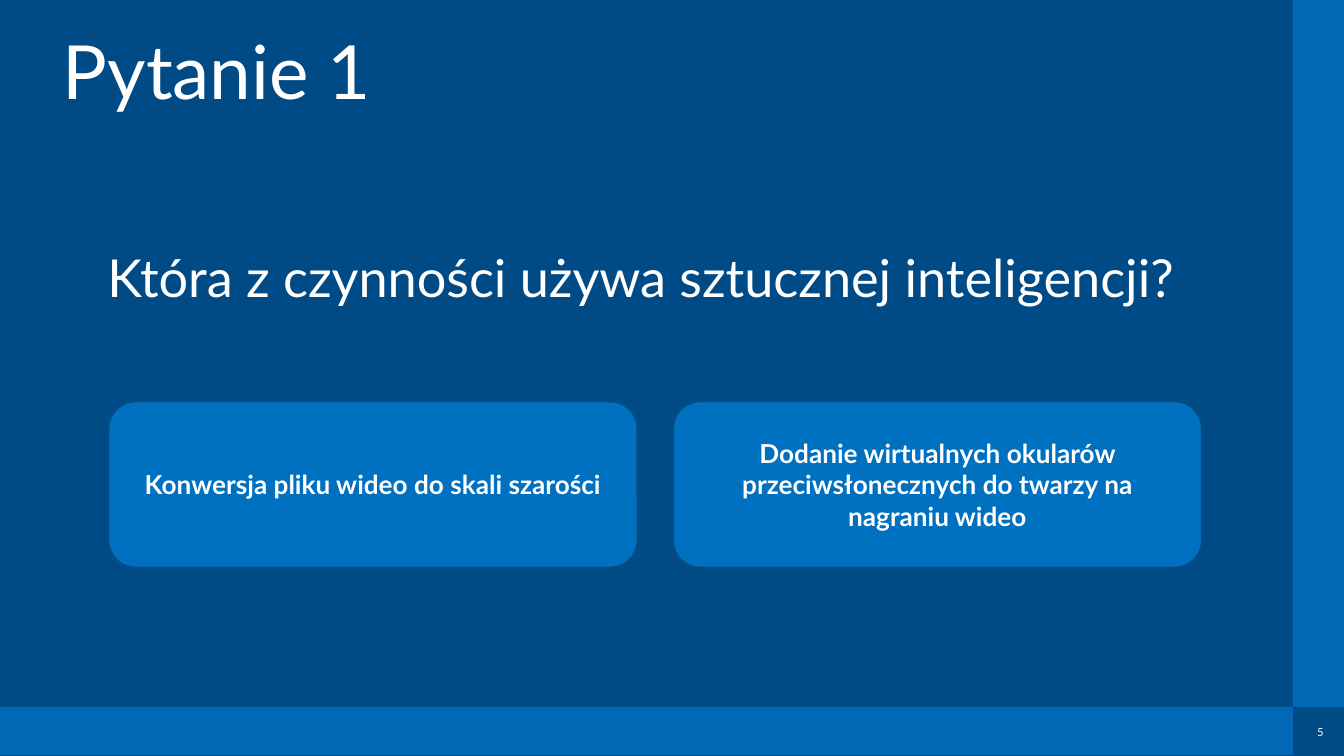
from pptx import Presentation
from pptx.dml.color import RGBColor
from pptx.enum import shapes, text
from pptx.util import Inches, Pt

NAVY = RGBColor(0x00, 0x4A, 0x86)
BAND = RGBColor(0x00, 0x68, 0xB5)
CARD = RGBColor(0x00, 0x70, 0xC0)
EDGE = RGBColor(0x00, 0x4D, 0x86)
WHITE = RGBColor(0xFF, 0xFF, 0xFF)
FONT = "Lato"
ANSWERS = [
    "Konwersja pliku wideo do skali szarości",
    "Dodanie wirtualnych okularów przeciwsłonecznych do twarzy na nagraniu wideo",
]


def write(sp, words, size, bold=False, spacing=1.0):
    """Put one centred white paragraph in a shape."""
    tf = sp.text_frame
    tf.text = words
    tf.word_wrap = True
    tf.auto_size = text.MSO_AUTO_SIZE.NONE
    tf.vertical_anchor = text.MSO_ANCHOR.MIDDLE
    p = tf.paragraphs[0]
    p.alignment = text.PP_ALIGN.CENTER
    p.line_spacing = spacing
    font = p.runs[0].font
    font.name, font.size, font.bold = FONT, Pt(size), bold
    font.color.rgb = WHITE


def clear_margins(sp):
    """Remove the inner margins of a text shape."""
    tf = sp.text_frame
    tf.margin_left = tf.margin_right = tf.margin_top = tf.margin_bottom = 0


def add_title(s, words):
    """Place and format the title placeholder."""
    sp = s.shapes.title
    sp.left, sp.top = Inches(0), Inches(0.11)
    sp.width, sp.height = Inches(3.23), Inches(0.94)
    write(sp, words, 40, spacing=0.8)
    clear_margins(sp)


def add_label(s, words, x, y, w, h, size, spacing=1.0):
    """Add a text box without margins."""
    sp = s.shapes.add_textbox(Inches(x), Inches(y), Inches(w), Inches(h))
    write(sp, words, size, spacing=spacing)
    clear_margins(sp)
    return sp


def add_block(s, kind, x, y, w, h, fill):
    """Add a filled shape without outline or shadow."""
    sp = s.shapes.add_shape(kind, Inches(x), Inches(y), Inches(w), Inches(h))
    sp.shadow.inherit = False
    sp.fill.solid()
    sp.fill.fore_color.rgb = fill
    sp.line.fill.background()
    return sp


def add_answer(s, words, x):
    """Add a rounded answer card."""
    kind = shapes.MSO_SHAPE.ROUNDED_RECTANGLE
    sp = add_block(s, kind, x, 2.98, 3.95, 1.25, CARD)
    sp.line.color.rgb = EDGE
    sp.line.width = Pt(2)
    write(sp, words, 14, bold=True)


def main():
    """Build the quiz question slide."""
    prs = Presentation()
    prs.slide_width = Inches(10)
    prs.slide_height = prs.slide_width * 9 // 16
    s = prs.slides.add_slide(prs.slide_layouts[5])
    s.background.fill.solid()
    s.background.fill.fore_color.rgb = NAVY

    rect = shapes.MSO_SHAPE.RECTANGLE
    add_block(s, rect, 0, 5.26, 9.62, 0.36, BAND)
    add_block(s, rect, 9.62, 0, 0.38, 5.26, BAND)
    number = add_label(s, "5", 9.77, 5.4, 0.11, 0.1, 6)
    number.text_frame.word_wrap = False

    add_title(s, "Pytanie 1")
    add_label(s, "Która z czynności używa sztucznej inteligencji?",
              0.2, 1.37, 9.13, 1.47, 28, spacing=0.8)
    for i, words in enumerate(ANSWERS):
        add_answer(s, words, 0.8 + 4.2 * i)
    prs.save("out.pptx")


if __name__ == "__main__":
    main()
